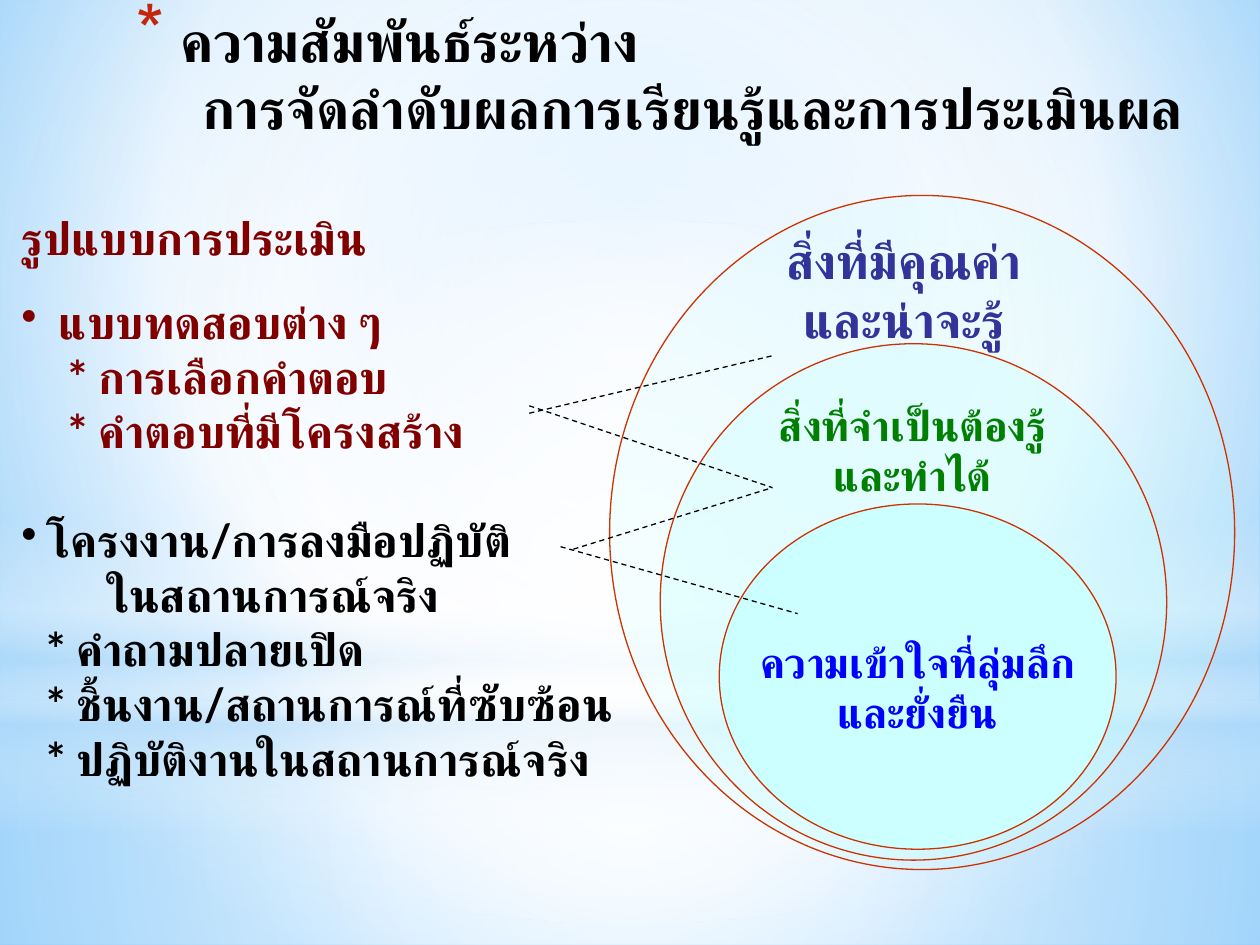
from lxml.etree import SubElement as Sub
from pptx import Presentation
from pptx.dml.color import RGBColor as RGB
from pptx.enum.dml import MSO_LINE_DASH_STYLE as Dash
from pptx.enum.shapes import MSO_CONNECTOR as Conn, MSO_SHAPE as Kind
from pptx.enum.text import MSO_ANCHOR as Anchor, MSO_AUTO_SIZE as Auto, PP_ALIGN as Align
from pptx.oxml.ns import qn
from pptx.util import Cm, Pt

BLACK = RGB(0, 0, 0)
WHITE = RGB(255, 255, 255)
PALE = RGB(0xB4, 0xDC, 0xFA)
SKY = RGB(0x9E, 0xD5, 0xFF)
DEEP = RGB(0x5B, 0xB9, 0xFF)
AQUA = RGB(0xCC, 0xFF, 0xFF)
RUST = RGB(0xCC, 0x33, 0)
RED = RGB(0xC3, 0x26, 0x0C)
MAROON = RGB(0x80, 0, 0)
BLUE = RGB(0, 0, 255)
GREEN = RGB(0, 0x80, 0)
NAVY = RGB(0x33, 0x33, 0x99)
MID = (50, 50, 50, 50)


def write(para, text, size=26, color=BLACK, font="Lato", align=Align.LEFT,
          left=0, hang=0, before=0, mark=None, tint=None, scale=100):
    """Write one formatted paragraph, with a bullet if mark is given."""
    para.alignment = align
    para.space_before = Pt(before)
    run = para.add_run()
    run.text = text
    face = run.font
    face.size, face.bold, face.name = Pt(size), True, font
    face.color.rgb = color
    Sub(run._r.get_or_add_rPr(), qn("a:cs"), typeface=font)
    props = para._p.get_or_add_pPr()
    props.set("marL", str(Cm(left)))
    props.set("indent", str(-Cm(hang)))
    if mark:
        tone = Sub(props, qn("a:buClr"))
        Sub(tone, qn("a:srgbClr"), val=str(tint or color))
        Sub(props, qn("a:buSzPct"), val=str(scale * 1000))
        Sub(props, qn("a:buChar"), char=mark)
    else:
        Sub(props, qn("a:buNone"))


def blend(host, stops, focus=None):
    """Turn the solid fill in host into a gradient."""
    fill = next(host.iter(qn("a:solidFill")))
    fill.clear()
    fill.tag = qn("a:gradFill")
    fill.set("rotWithShape", "1")
    items = Sub(fill, qn("a:gsLst"))
    for place, color, alpha in stops:
        stop = Sub(items, qn("a:gs"), pos=str(place * 1000))
        tone = Sub(stop, qn("a:srgbClr"), val=str(color))
        if alpha < 100:
            Sub(tone, qn("a:alpha"), val=str(alpha * 1000))
    if focus:
        way = Sub(fill, qn("a:path"), path="circle")
        sides = {side: str(part * 1000) for side, part in zip("ltrb", focus)}
        Sub(way, qn("a:fillToRect"), sides)
    else:
        Sub(fill, qn("a:lin"), ang="5400000", scaled="0")


class Deck:
    """Hold the slide and its shared style."""

    def __init__(self):
        self.show = Presentation()
        self.show.slide_width, self.show.slide_height = Cm(25.4), Cm(19.05)
        self.slide = self.show.slides.add_slide(self.show.slide_layouts[5])
        self.shapes = self.slide.shapes
        self.width = 0.75

    def back(self, stops, focus):
        """Fill the background."""
        self.slide.background.fill.solid()
        blend(self.slide.background._cSld, stops, focus)

    def shape(self, kind, box, color):
        """Add a filled shape without outline."""
        shape = self.shapes.add_shape(kind, *map(Cm, box))
        shape.shadow.inherit = False
        shape.fill.solid()
        shape.fill.fore_color.rgb = color
        shape.line.fill.background()
        return shape

    def glow(self, kind, box, stops, focus=None):
        """Add a soft gradient layer."""
        shape = self.shape(kind, box, WHITE)
        blend(shape._element.spPr, stops, focus)

    def ring(self, box, alpha):
        """Add an outlined, see-through ellipse."""
        shape = self.shape(Kind.OVAL, box, AQUA)
        tone = next(shape._element.spPr.iter(qn("a:srgbClr")))
        Sub(tone, qn("a:alpha"), val=str(alpha * 1000))
        shape.line.color.rgb = RUST
        shape.line.width = Pt(self.width)

    def fill(self, frame, rows, **style):
        """Put rows of text and their formats into a frame."""
        frame.word_wrap = True
        frame.auto_size = Auto.NONE
        frame.vertical_anchor = Anchor.TOP
        for i, (text, extra) in enumerate(rows):
            para = frame.add_paragraph() if i else frame.paragraphs[0]
            write(para, text, **{**style, **extra})

    def title(self, box, rows, **style):
        """Place the title in front of the layers."""
        title = self.shapes.title
        title.left, title.top, title.width, title.height = map(Cm, box)
        self.shapes._spTree.append(title._element)
        self.fill(title.text_frame, rows, **style)

    def text(self, box, rows, **style):
        """Add a text box."""
        self.fill(self.shapes.add_textbox(*map(Cm, box)).text_frame, rows, **style)

    def link(self, *ends):
        """Add a dashed line."""
        line = self.shapes.add_connector(Conn.STRAIGHT, *map(Cm, ends))
        line.line.color.rgb = BLACK
        line.line.width = Pt(self.width)
        line.line.dash_style = Dash.DASH
        Sub(line._element.spPr, qn("a:effectLst"))


def main():
    """Build and save the slide."""
    deck = Deck()
    deck.back([(0, SKY, 100), (60, WHITE, 100), (100, DEEP, 100)], (20, 10, 20, 60))
    deck.glow(Kind.RECTANGLE, (0, 14.17, 25.4, 4.88),
              [(0, WHITE, 91), (37, WHITE, 76), (100, PALE, 79)], MID)
    deck.glow(Kind.RECTANGLE, (0, 0, 25.4, 14.17),
              [(0, WHITE, 89), (48, WHITE, 62), (100, PALE, 79)], MID)
    deck.glow(Kind.RECTANGLE, (0, 10.46, 25.4, 6.35),
              [(0, WHITE, 0), (29, WHITE, 30), (45, PALE, 40),
               (55, WHITE, 26), (65, PALE, 60), (100, WHITE, 0)])
    deck.glow(Kind.OVAL, (0, 4.45, 25.4, 14.17), [(0, WHITE, 100), (56, WHITE, 0)], MID)

    deck.title((2.49, 0, 21.61, 3.05), [
        ("ความสัมพันธ์ระหว่าง",
         dict(left=0.89, hang=0.89, mark="*", tint=RED, scale=128)),
        ("การจัดลำดับผลการเรียนรู้และการประเมินผล", dict(align=Align.RIGHT)),
    ], size=32)

    deck.ring((12.29, 3.94, 12.6, 13.59), 20)
    deck.ring((13.31, 6.93, 10.21, 10.41), 37)
    deck.ring((14.5, 10.16, 8, 6.96), 100)

    for box, size, color, lines in (
        ((14.5, 12.7, 8, 2.24), 24, BLUE, ("ความเข้าใจที่ลุ่มลึก", "และยั่งยืน")),
        ((14.4, 7.92, 8, 2.24), 24, GREEN, ("สิ่งที่จำเป็นต้องรู้", "และทำได้")),
        ((14.91, 4.52, 6.63, 2.24), 28, NAVY, ("สิ่งที่มีคุณค่า", "และน่าจะรู้")),
    ):
        deck.text(box, [(line, {}) for line in lines],
                  size=size, color=color, align=Align.CENTER)

    tests = dict(color=MAROON, left=1.42)
    tasks = dict(left=0.98)
    deck.text((-0.3, 4.11, 15.6, 12.01), [
        ("รูปแบบการประเมิน", dict(color=MAROON, left=0.48)),
        ("แบบทดสอบต่าง ๆ",
         dict(color=MAROON, left=1.24, hang=0.76, before=17, mark="•")),
        ("* การเลือกคำตอบ", tests),
        ("* คำตอบที่มีโครงสร้าง", tests),
        ("โครงงาน/การลงมือปฏิบัติ", dict(left=0.99, hang=0.51, before=31, mark="•")),
        ("ในสถานการณ์จริง", dict(left=2.21)),
        ("* คำถามปลายเปิด", tasks),
        ("* ชิ้นงาน/สถานการณ์ที่ซับซ้อน", tasks),
        ("* ปฏิบัติงานในสถานการณ์จริง", tasks),
    ])

    for ends in ((10.67, 8.18, 15.57, 9.83), (11.3, 11.02, 16.08, 12.37),
                 (10.67, 8.33, 15.62, 7.16), (11.56, 11.07, 15.57, 9.83)):
        deck.link(*ends)
    deck.show.save("out.pptx")


if __name__ == "__main__":
    main()
